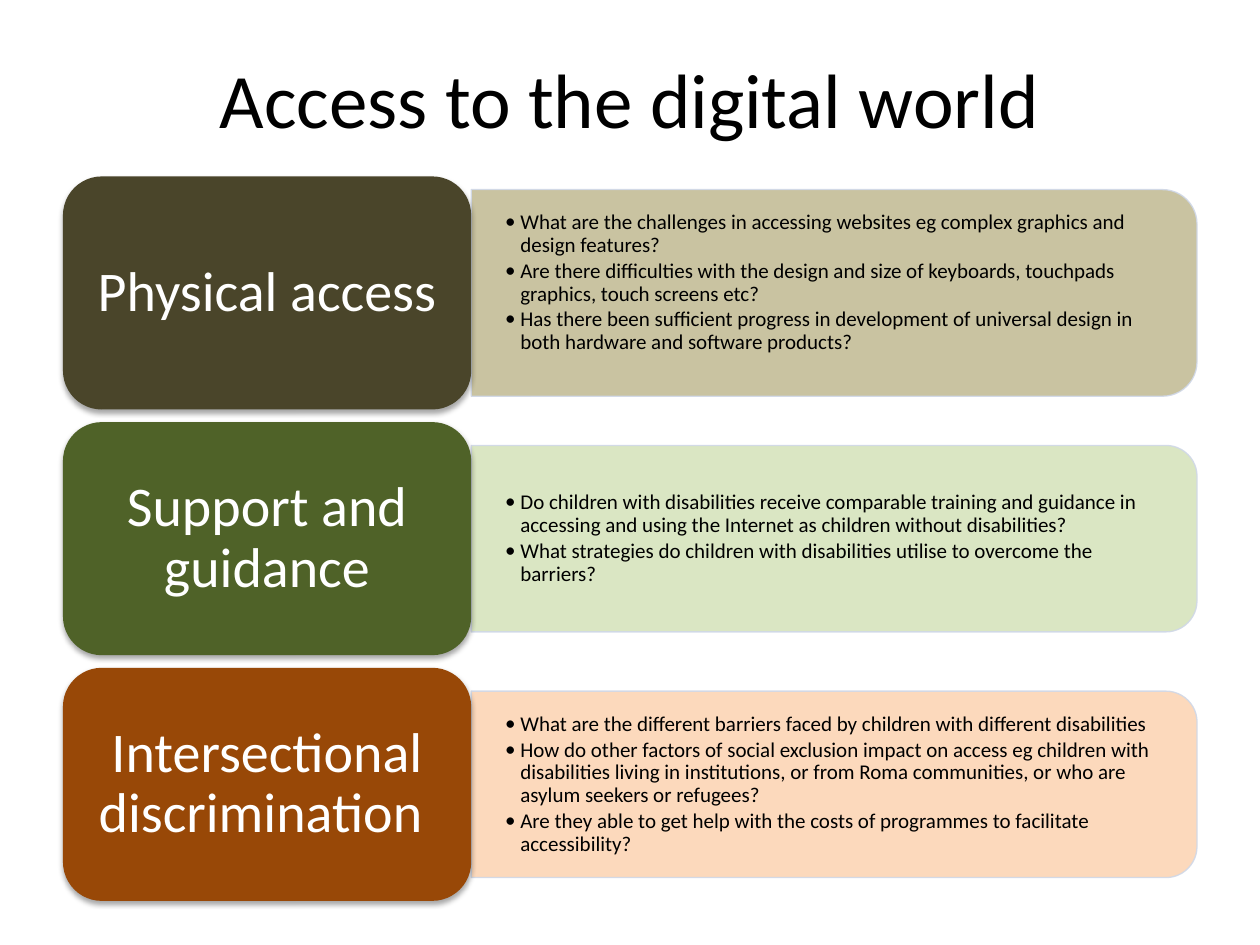
import pptx
import pptx.util
import pptx.dml.color
import pptx.enum.shapes
import pptx.enum.text
import pptx.oxml
import pptx.oxml.ns

Inches = pptx.util.Inches
Pt = pptx.util.Pt
SHAPE = pptx.enum.shapes.MSO_SHAPE
ALIGN = pptx.enum.text.PP_ALIGN

COLORS = {
    "text": "000000", "label": "FFFFFF", "edge": "D0D8E8",
    "olive": "4A452A", "sand": "C4BD97",
    "green": "4F6228", "mint": "D7E4BD",
    "rust": "984807", "peach": "FCD5B5",
}

TOP, LEFT, STEP = 1.4, 0.5, 1.95
LABEL_W, LABEL_H, PANEL_W = 3.24, 1.85, 5.76

# label, label colour, panel colour, panel height, extra space below, bullets
ROWS = [
    ("Physical access", "olive", "sand", 1.64, 0.16, [
        "What are the challenges in accessing websites eg complex graphics and design features?",
        "Are there difficulties with the design and size of keyboards, touchpads graphics, touch screens etc?",
        "Has there been sufficient progress in development of universal design in both hardware and software products?",
    ]),
    ("Support and guidance", "green", "mint", 1.48, 0, [
        "Do children with disabilities receive comparable training and guidance in accessing and using the Internet as children without disabilities?",
        "What strategies do children with disabilities utilise to overcome the barriers?",
    ]),
    ("Intersectional discrimination ", "rust", "peach", 1.48, 0, [
        "What are the different barriers faced by children with different disabilities",
        "How do other factors of social exclusion impact on access eg children with disabilities living in institutions, or from Roma communities, or who are asylum seekers or refugees?",
        "Are they able to get help with the costs of programmes to facilitate accessibility?",
    ]),
]


def rgb(name):
    return pptx.dml.color.RGBColor.from_string(COLORS[name])


def add_xml(parent, xml):
    """Append a fragment in the drawing namespace."""
    node = pptx.oxml.parse_xml(xml.replace(">", f" {pptx.oxml.ns.nsdecls('a')}>", 1))
    parent.append(node)


def fade(fill, name):
    """Fill solidly at 90 % opacity."""
    fill.solid()
    fill.fore_color.rgb = rgb(name)
    color = fill._xPr.find(".//" + pptx.oxml.ns.qn("a:srgbClr"))
    add_xml(color, '<a:alpha val="90000"></a:alpha>')


def bullet(para):
    props = para._p.get_or_add_pPr()
    props.set("marL", str(Inches(0.12)))
    props.set("indent", str(Inches(-0.12)))
    add_xml(props, '<a:buFont typeface="Calibri"></a:buFont>')
    add_xml(props, '<a:buChar char="•"></a:buChar>')


def put_text(shape, lines, size, color="text", align=ALIGN.CENTER,
             pad=(0.1, 0.05, 0.1, 0.05), space=1.0, after=0, dots=False):
    frame = shape.text_frame
    frame.word_wrap = True
    frame.vertical_anchor = pptx.enum.text.MSO_ANCHOR.MIDDLE
    (frame.margin_left, frame.margin_top,
     frame.margin_right, frame.margin_bottom) = map(Inches, pad)
    for i, line in enumerate(lines):
        para = frame.add_paragraph() if i else frame.paragraphs[0]
        para.alignment = align
        para.line_spacing = space
        para.space_after = Pt(after)
        if dots:
            bullet(para)
        run = para.add_run()
        run.text = line
        run.font.name = "Calibri"
        run.font.size = Pt(size)
        run.font.color.rgb = rgb(color)


def add_box(slide, x, y, w, h):
    return slide.shapes.add_textbox(Inches(x), Inches(y), Inches(w), Inches(h))


def add_panel(slide, mid, high, color, lines, extra):
    """Draw a panel, rounded on the right, with its bullets."""
    left = LEFT + LABEL_W
    shape = slide.shapes.add_shape(
        SHAPE.ROUND_2_SAME_RECTANGLE,
        Inches(left + (PANEL_W - high) / 2), Inches(mid - PANEL_W / 2),
        Inches(high), Inches(PANEL_W))
    shape.rotation = 90
    shape.shadow.inherit = False
    fade(shape.fill, color)
    fade(shape.line.fill, "edge")
    shape.line.width = Pt(0.75)
    inset = high * 0.05
    box = add_box(slide, left, mid - high / 2 + inset, PANEL_W - inset, high - 2 * inset)
    put_text(box, lines, 12, align=ALIGN.LEFT, pad=(0.27, 0.14, 0.27, 0.14 + extra),
             space=0.9, after=1.8, dots=True)


def add_label(slide, top, color, text):
    shape = slide.shapes.add_shape(
        SHAPE.ROUNDED_RECTANGLE, Inches(LEFT), Inches(top),
        Inches(LABEL_W), Inches(LABEL_H))
    shape.fill.solid()
    shape.fill.fore_color.rgb = rgb(color)
    shape.line.fill.background()
    add_xml(shape._element.spPr, f"""<a:effectLst>
        <a:outerShdw blurRad="{Pt(3.1)}" dist="{Pt(1.8)}" dir="5400000" rotWithShape="0">
        <a:srgbClr val="000000"><a:alpha val="35000"/></a:srgbClr>
        </a:outerShdw></a:effectLst>""")
    put_text(shape, [text], 32, color="label", pad=(0.13, 0.07, 0.13, 0.07), space=0.9)


def main():
    deck = pptx.Presentation()
    deck.slide_width, deck.slide_height = Inches(10), Inches(7.5)
    slide = deck.slides.add_slide(deck.slide_layouts[6])
    put_text(add_box(slide, 0.5, 0.3, 9, 0.95), ["Access to the digital world"], 44)
    for i, (text, dark, light, high, extra, lines) in enumerate(ROWS):
        top = TOP + i * STEP
        add_panel(slide, top + LABEL_H / 2, high, light, lines, extra)
        add_label(slide, top, dark, text)
    deck.save("out.pptx")


if __name__ == "__main__":
    main()
